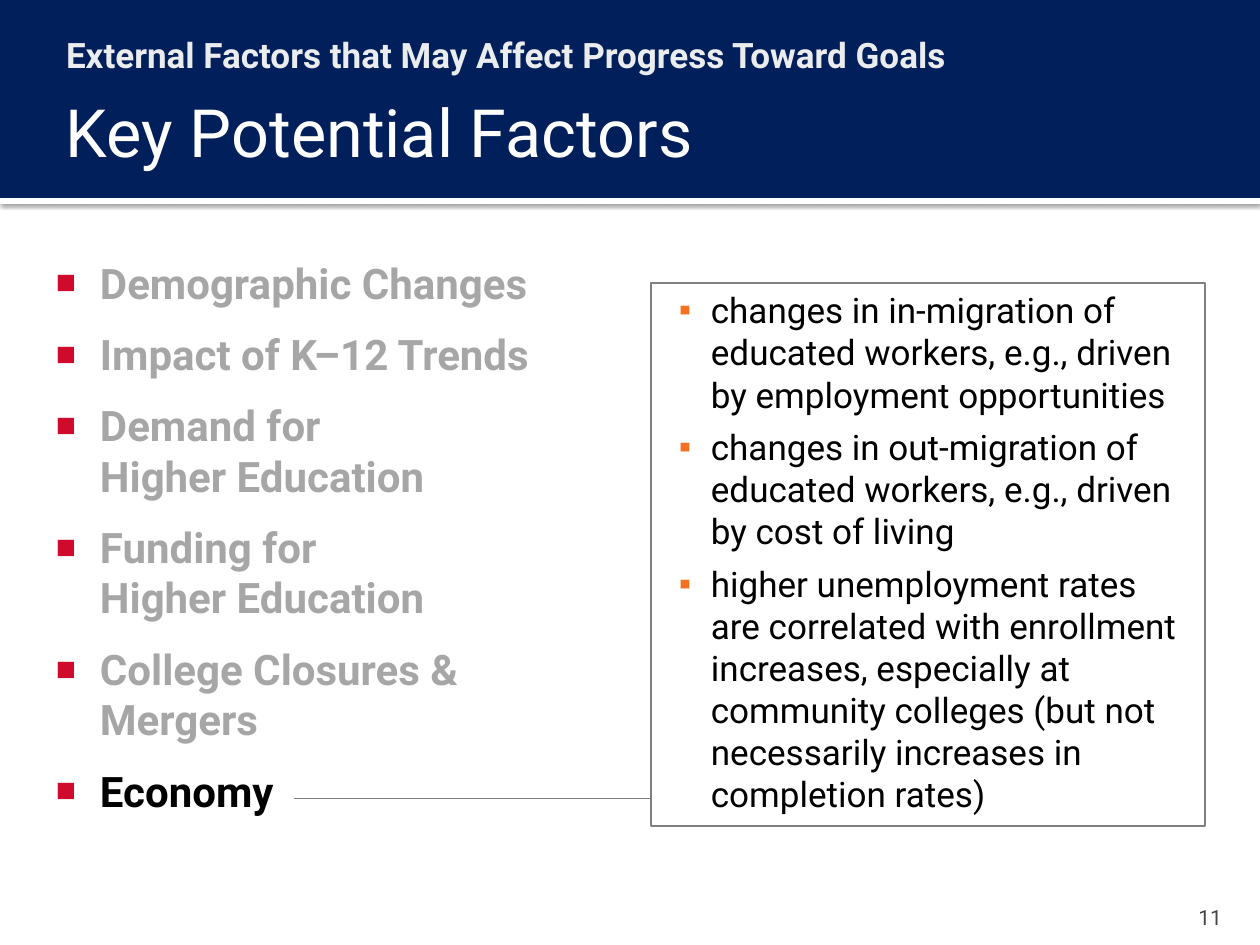
from lxml import etree
from pptx import Presentation
from pptx.dml.color import RGBColor
from pptx.enum import shapes, text
from pptx.oxml.ns import qn
from pptx.util import Emu, Pt

# Content
SUBTITLE = "External Factors that May Affect Progress Toward Goals"
TITLE = "Key Potential Factors"
PAGE = "11"
FACTORS = [
    "Demographic Changes",
    "Impact of K–12 Trends",
    "Demand for \vHigher Education",
    "Funding for \vHigher Education",
    "College Closures & Mergers",
    "Economy",
]
CURRENT = "Economy"
DETAILS = [
    "changes in in-migration of educated workers, e.g., driven by employment opportunities",
    "changes in out-migration of educated workers, e.g., driven by cost of living",
    "higher unemployment rates are correlated with enrollment increases, especially at "
    "community colleges (but not necessarily increases in completion rates)",
]

# Look
FONT = "Roboto"
NAVY = RGBColor(0x00, 0x1F, 0x5B)
WHITE = RGBColor(0xFF, 0xFF, 0xFF)
PALE = RGBColor(0xEA, 0xEC, 0xEE)
BLACK = RGBColor(0x00, 0x00, 0x00)
MUTED = RGBColor(0xA6, 0xA6, 0xA6)
GRAY = RGBColor(0x80, 0x80, 0x80)
DARK = RGBColor(0x45, 0x45, 0x45)
RED = RGBColor(0xCF, 0x0A, 0x2C)
ORANGE = RGBColor(0xF3, 0x71, 0x21)

# Layout in px, 126 to the inch
SLIDE_W, SLIDE_H = 1260, 945
BANNER_H, STRIP_H = 198, 6
BOX = (651, 283, 554, 543)
LINE_X, LINE_Y = 294, 798


def px(n):
    return Emu(round(n * 914400 / 126))


def set_frame(sp, insets, anchor=text.MSO_ANCHOR.TOP, fit=text.MSO_AUTO_SIZE.NONE):
    tf = sp.text_frame
    sides = ("margin_left", "margin_top", "margin_right", "margin_bottom")
    values = dict(zip(sides, map(px, insets)))
    values.update(word_wrap=True, auto_size=fit, vertical_anchor=anchor)
    for name, value in values.items():
        setattr(tf, name, value)
    return tf


def write(tf, lines, size, color, bold=False, align=text.PP_ALIGN.LEFT, **spacing):
    for i, line in enumerate(lines):
        p = tf.paragraphs[0] if i == 0 else tf.add_paragraph()
        p.text = line
        for name, value in dict(alignment=align, **spacing).items():
            setattr(p, name, value)
        style = dict(name=FONT, size=Pt(size), bold=bold)
        for r in p.runs:
            for name, value in style.items():
                setattr(r.font, name, value)
            r.font.color.rgb = color


def indent(p, left, first=0, bullet=None, color=None, percent=100):
    pPr = p._p.get_or_add_pPr()
    pPr.set("marL", str(px(left)))
    pPr.set("indent", str(px(first)))
    if bullet:
        clr = etree.SubElement(pPr, qn("a:buClr"))
        etree.SubElement(clr, qn("a:srgbClr"), val=str(color))
        etree.SubElement(pPr, qn("a:buSzPct"), val=str(percent * 1000))
        etree.SubElement(pPr, qn("a:buFont"), typeface="Arial")
        etree.SubElement(pPr, qn("a:buChar"), char=bullet)


def add_rect(s, at, fill=None, line=None):
    sp = s.shapes.add_shape(shapes.MSO_SHAPE.RECTANGLE, *map(px, at))
    sp.shadow.inherit = False
    if fill is None:
        sp.fill.background()
    else:
        sp.fill.solid()
        sp.fill.fore_color.rgb = fill
    if line is None:
        sp.line.fill.background()
    else:
        sp.line.color.rgb = line
        sp.line.width = Pt(0.75)
    return sp


def add_shadow(sp):
    effects = sp._element.spPr.find(qn("a:effectLst"))
    shadow = etree.SubElement(effects, qn("a:outerShdw"), blurRad=str(Pt(2.5)),
                              dist=str(Pt(0.8)), dir="5400000", rotWithShape="0")
    clr = etree.SubElement(shadow, qn("a:srgbClr"), val=str(BLACK))
    etree.SubElement(clr, qn("a:alpha"), val="60000")


def main():
    prs = Presentation()
    prs.slide_width, prs.slide_height = px(SLIDE_W), px(SLIDE_H)
    s = prs.slides.add_slide(prs.slide_layouts[5])

    # Banner with a shadowed strip below
    add_shadow(add_rect(s, (0, BANNER_H, SLIDE_W, STRIP_H), WHITE))
    add_rect(s, (0, 0, SLIDE_W, BANNER_H), NAVY)

    # Page number
    sp = s.shapes.add_textbox(*map(px, (1134, 892, 101, 38)))
    tf = set_frame(sp, (13, 6, 13, 0), text.MSO_ANCHOR.BOTTOM)
    write(tf, [PAGE], 12, DARK, align=text.PP_ALIGN.RIGHT)

    # List of factors, the current one in black
    sp = s.shapes.add_textbox(*map(px, (32, 244, 577, 638)))
    tf = set_frame(sp, (8, 13, 13, 6))
    write(tf, FACTORS, 24, MUTED, bold=True, space_before=Pt(12))
    for p in tf.paragraphs:
        indent(p, 60, -44, "■", RED, 80)
        if p.text == CURRENT:
            p.runs[0].font.color.rgb = BLACK

    # Subtitle
    sp = s.shapes.add_textbox(*map(px, (42, 21, 1177, 63)))
    tf = set_frame(sp, (8, 13, 13, 6))
    write(tf, [SUBTITLE], 20, PALE, bold=True)
    indent(tf.paragraphs[0], 16)

    # Title, brought in front of the banner
    title = s.shapes.title
    title.left, title.top, title.width, title.height = map(px, (53, 73, 1177, 116))
    tf = set_frame(title, (13, 6, 6, 6), text.MSO_ANCHOR.MIDDLE)
    write(tf, [TITLE], 38, WHITE)
    title._element.getparent().append(title._element)

    # Details of the current factor
    sp = add_rect(s, BOX, line=GRAY)
    tf = set_frame(sp, (13, 6, 13, 6), fit=text.MSO_AUTO_SIZE.SHAPE_TO_FIT_TEXT)
    write(tf, DETAILS, 20, BLACK, space_after=Pt(6))
    for p in tf.paragraphs:
        p.level = 1
        indent(p, 47, -32, "▪", ORANGE)

    # Line from the current factor to its details
    line = s.shapes.add_connector(shapes.MSO_CONNECTOR.STRAIGHT,
                                  *map(px, (LINE_X, LINE_Y, BOX[0], LINE_Y)))
    line.line.color.rgb = GRAY
    line.line.width = Pt(0.5)
    etree.SubElement(line._element.spPr, qn("a:effectLst"))

    prs.save("out.pptx")


if __name__ == "__main__":
    main()
